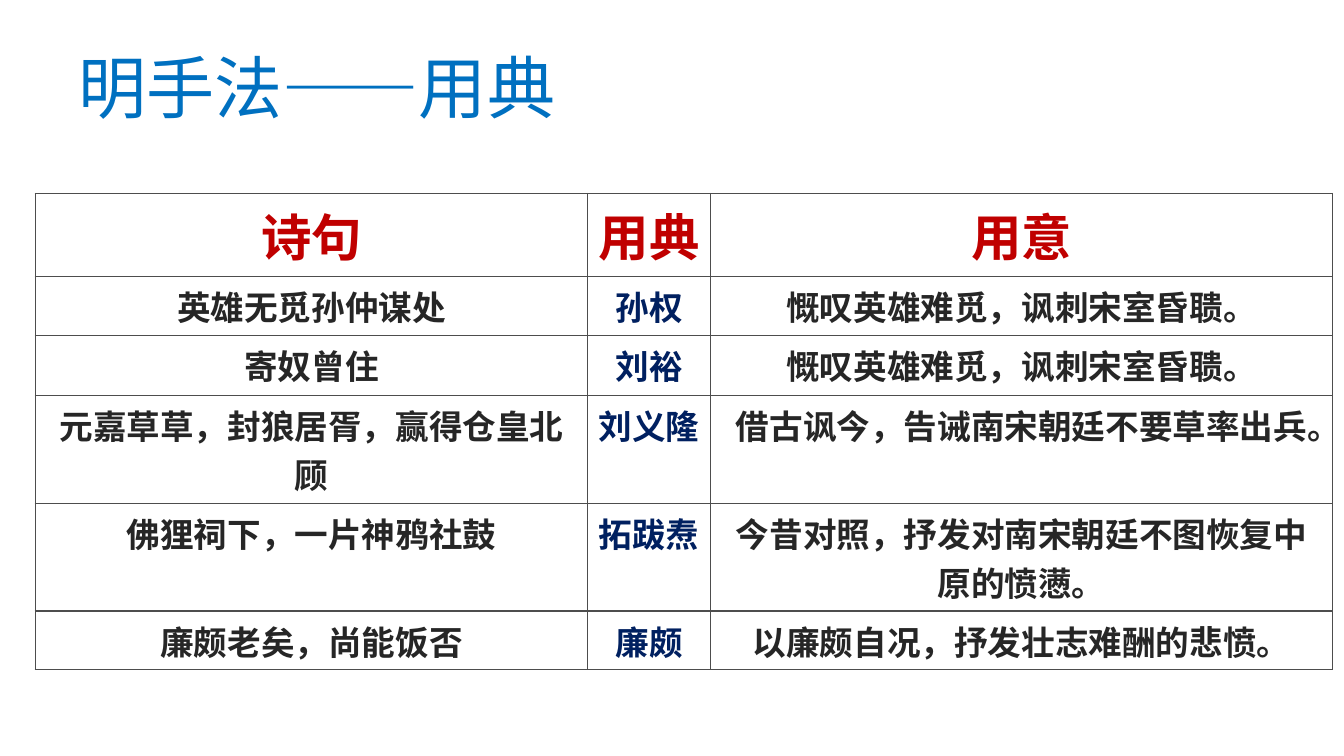
from lxml.etree import SubElement
from pptx import Presentation
from pptx.dml.color import RGBColor
from pptx.enum.text import MSO_ANCHOR, MSO_AUTO_SIZE, PP_ALIGN
from pptx.oxml.ns import qn
from pptx.util import Pt

TITLE = "明手法——用典"
ROWS = [
    ("诗句", "用典", "用意"),
    ("英雄无觅孙仲谋处", "孙权", "慨叹英雄难觅，讽刺宋室昏聩。"),
    ("寄奴曾住", "刘裕", "慨叹英雄难觅，讽刺宋室昏聩。"),
    ("元嘉草草，封狼居胥，赢得仓皇北顾", "刘义隆", "借古讽今，告诫南宋朝廷不要草率出兵。"),
    ("佛狸祠下，一片神鸦社鼓", "拓跋焘", "今昔对照，抒发对南宋朝廷不图恢复中原的愤懑。"),
    ("廉颇老矣，尚能饭否", "廉颇", "以廉颇自况，抒发壮志难酬的悲愤。"),
]
COLUMN_WIDTHS = (394.6, 87.8, 444.2)
ROW_HEIGHTS = (38.2, 29.5, 43.2, 29.5, 29.5, 29.5)
COLUMN_COLORS = ("262626", "002060", "262626")
HEADER_COLOR = "C00000"
BORDER_COLOR = "4D4D4D"
TITLE_FORMAT = {"name": "Noto Sans CJK JP", "size": Pt(48.6), "bold": False}
HEADER_FORMAT = {"name": "Noto Sans CJK SC", "size": Pt(36), "bold": True}
BODY_FORMAT = {**HEADER_FORMAT, "size": Pt(24)}


def rgb(color):
    return RGBColor.from_string(color)


def write(paragraph, text, font_format, color):
    run = paragraph.add_run()
    run.text = text
    for attribute, value in font_format.items():
        setattr(run.font, attribute, value)
    run.font.color.rgb = rgb(color)
    east_asian = SubElement(run.font._element, qn("a:ea"))
    east_asian.set("typeface", font_format["name"])


def add_borders(cell):
    properties = cell._tc.get_or_add_tcPr()
    for side in ("lnL", "lnR", "lnT", "lnB"):
        line = SubElement(properties, qn(f"a:{side}"), w=str(Pt(1)))
        fill = SubElement(line, qn("a:solidFill"))
        SubElement(fill, qn("a:srgbClr"), val=BORDER_COLOR)


presentation = Presentation()
presentation.slide_width, presentation.slide_height = Pt(960), Pt(540)
slide = presentation.slides.add_slide(presentation.slide_layouts[5])

title = slide.shapes.title
title.left, title.top, title.width, title.height = Pt(49), Pt(33.8), Pt(710), Pt(62.6)
frame = title.text_frame
frame.auto_size = MSO_AUTO_SIZE.NONE
frame.vertical_anchor = MSO_ANCHOR.MIDDLE
paragraph = frame.paragraphs[0]
paragraph.alignment = PP_ALIGN.LEFT
paragraph.line_spacing = 0.9
write(paragraph, TITLE, TITLE_FORMAT, "0070C0")

table = slide.shapes.add_table(
    len(ROWS), len(COLUMN_WIDTHS), Pt(25.2), Pt(138.2),
    Pt(sum(COLUMN_WIDTHS)), Pt(sum(ROW_HEIGHTS)),
).table
table.first_row = table.horz_banding = False
for column, width in zip(table.columns, COLUMN_WIDTHS):
    column.width = Pt(width)
for row, height in zip(table.rows, ROW_HEIGHTS):
    row.height = Pt(height)

for row_index, texts in enumerate(ROWS):
    is_header = row_index == 0
    for column_index, text in enumerate(texts):
        cell = table.cell(row_index, column_index)
        add_borders(cell)
        cell.fill.background()
        paragraph = cell.text_frame.paragraphs[0]
        paragraph.alignment = PP_ALIGN.CENTER
        write(paragraph, text, HEADER_FORMAT if is_header else BODY_FORMAT,
              HEADER_COLOR if is_header else COLUMN_COLORS[column_index])

presentation.save("out.pptx")
